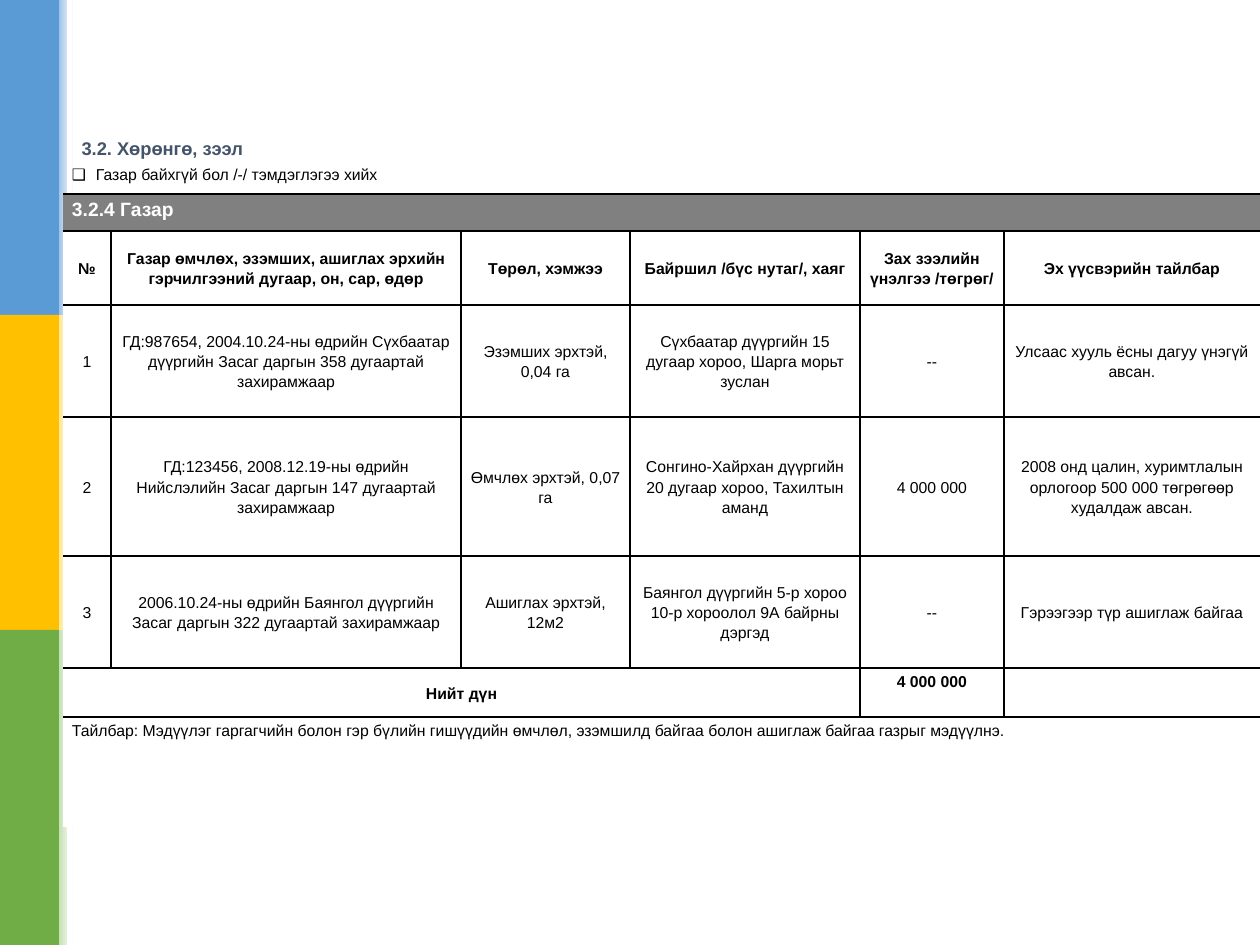
from lxml.etree import SubElement
from pptx import Presentation
from pptx.dml.color import RGBColor
from pptx.enum.shapes import MSO_SHAPE as Shape
from pptx.enum.text import MSO_ANCHOR as Anchor, PP_ALIGN as Align
from pptx.oxml.ns import qn
from pptx.util import Emu, Pt

FONT = "Arial"
BLACK, WHITE, GREY, SLATE = "000000", "FFFFFF", "808080", "44546A"
STRIPES = [("5B9BD5", "9DC3E6"), ("FFC000", "FFE699"), ("70AD47", "C5E0B4")]
STRIPE_HEIGHT = 315
COLUMN_WIDTHS = [48, 350, 169, 230, 144, 256]
ROW_HEIGHTS = [33, 37, 74, 112, 139, 112, 49, 110]
NOTE_ROW, BAND_ROW, HEADER_ROW, TOTAL_ROW, REMARK_ROW = 0, 1, 2, 6, 7

NOTE = "Газар байхгүй бол /-/ тэмдэглэгээ хийх"
REMARK = ("Тайлбар: Мэдүүлэг гаргагчийн болон гэр бүлийн гишүүдийн өмчлөл, "
          "эзэмшилд байгаа болон ашиглаж байгаа газрыг мэдүүлнэ.")
LAND_ROWS = [
    ["№", "Газар өмчлөх, эзэмших, ашиглах эрхийн гэрчилгээний дугаар, он, сар, өдөр",
     "Төрөл, хэмжээ", "Байршил /бүс нутаг/, хаяг",
     "Зах зээлийн үнэлгээ /төгрөг/", "Эх үүсвэрийн тайлбар"],
    ["1", "ГД:987654, 2004.10.24-ны өдрийн Сүхбаатар дүүргийн Засаг даргын "
     "358 дугаартай захирамжаар", "Эзэмших эрхтэй, 0,04 га",
     "Сүхбаатар дүүргийн 15 дугаар хороо, Шарга морьт зуслан", "--",
     "Улсаас хууль ёсны дагуу үнэгүй авсан."],
    ["2", "ГД:123456, 2008.12.19-ны өдрийн Нийслэлийн Засаг даргын "
     "147 дугаартай захирамжаар", "Өмчлөх эрхтэй, 0,07 га",
     "Сонгино-Хайрхан дүүргийн 20 дугаар хороо, Тахилтын аманд", "4 000 000",
     "2008 онд цалин, хуримтлалын орлогоор 500 000 төгрөгөөр худалдаж авсан."],
    ["3", "2006.10.24-ны өдрийн Баянгол дүүргийн Засаг даргын "
     "322 дугаартай захирамжаар", "Ашиглах эрхтэй, 12м2",
     "Баянгол дүүргийн 5-р хороо 10-р хороолол 9А байрны дэргэд", "--",
     "Гэрээгээр түр ашиглаж байгаа"],
]


def px(length):
    return Emu(round(length * 914400 / 126))


def rgb(hex_color):
    return RGBColor.from_string(hex_color)


def add_run(paragraph, text, size=9, color=BLACK, bold=False):
    run = paragraph.add_run()
    run.text = text
    run.font.name, run.font.size, run.font.bold = FONT, Pt(size), bold
    run.font.color.rgb = rgb(color)


def add_bar(slide, left, top, width, height, color, fade=False):
    bar = slide.shapes.add_shape(Shape.RECTANGLE, px(left), px(top), px(width), px(height))
    bar.shadow.inherit = False
    bar.line.fill.background()
    if fade:
        bar.fill.gradient()
        bar.fill.gradient_angle = 0
        for stop, stop_color in zip(bar.fill.gradient_stops, (color, WHITE)):
            stop.color.rgb = rgb(stop_color)
            stop.position = 0 if stop_color == color else 1
    else:
        bar.fill.solid()
        bar.fill.fore_color.rgb = rgb(color)


def add_side_stripes(slide):
    for index, (color, tint) in enumerate(STRIPES):
        top = index * STRIPE_HEIGHT
        add_bar(slide, 0, top, 59, STRIPE_HEIGHT, color)
        add_bar(slide, 59, top, 15, STRIPE_HEIGHT, tint, fade=True)
    add_bar(slide, 67, 0, 5, 945, WHITE)


def set_title(slide, text):
    title = slide.shapes.title
    title.left, title.top, title.width, title.height = px(69), px(137), px(876), px(39)
    frame = title.text_frame
    frame.vertical_anchor = Anchor.TOP
    frame.margin_top = frame.margin_bottom = 0
    frame.paragraphs[0].alignment = Align.LEFT
    add_run(frame.paragraphs[0], text, 10.5, SLATE, True)


def set_borders(cell, edges):
    """Draw the given edges (letters of LRTB) in black and clear the others."""
    properties = cell._tc.get_or_add_tcPr()
    for position, edge in enumerate("LRTB"):
        line = properties.makeelement(qn(f"a:ln{edge}"), {"w": str(Pt(1))})
        properties.insert(position, line)
        if edge in edges:
            fill = SubElement(line, qn("a:solidFill"))
            SubElement(fill, qn("a:srgbClr"), val=BLACK)
        else:
            SubElement(line, qn("a:noFill"))


def edges_of(row, column):
    if row == NOTE_ROW:
        return "B"
    if row == REMARK_ROW:
        return "T"
    edges = "TB"
    if row > BAND_ROW:
        edges += "L" if column > 0 else ""
        edges += "R" if column < len(COLUMN_WIDTHS) - 1 else ""
    return edges


def set_margins(cell, side, end):
    cell.margin_left = cell.margin_right = px(side)
    cell.margin_top = cell.margin_bottom = px(end)


def fill_body_cell(cell, text, bold=False):
    cell.vertical_anchor = Anchor.MIDDLE
    paragraph = cell.text_frame.paragraphs[0]
    paragraph.alignment, paragraph.line_spacing = Align.CENTER, 1.15
    add_run(paragraph, text, bold=bold)


def fill_edge_cell(cell, text, align=Align.LEFT, **style):
    """Write top-anchored text, as in the rows around the body."""
    set_margins(cell, 9, 5)
    paragraph = cell.text_frame.paragraphs[0]
    paragraph.alignment = align
    add_run(paragraph, text, **style)


def add_bullet(paragraph, symbol):
    properties = paragraph._p.get_or_add_pPr()
    properties.set("marL", str(px(24)))
    properties.set("indent", str(-px(24)))
    SubElement(properties, qn("a:buFont"), typeface=FONT)
    SubElement(properties, qn("a:buChar"), char=symbol)


def add_land_table(slide):
    table = slide.shapes.add_table(
        len(ROW_HEIGHTS), len(COLUMN_WIDTHS), px(63), px(161),
        px(sum(COLUMN_WIDTHS)), px(sum(ROW_HEIGHTS))).table
    table.first_row = table.horz_banding = False
    for column, width in zip(table.columns, COLUMN_WIDTHS):
        column.width = px(width)
    for row_index, (row, height) in enumerate(zip(table.rows, ROW_HEIGHTS)):
        row.height = px(height)
        for column_index, cell in enumerate(row.cells):
            set_margins(cell, 8, 0)
            if row_index == NOTE_ROW:
                cell.fill.background()
            else:
                cell.fill.solid()
                cell.fill.fore_color.rgb = rgb(GREY if row_index == BAND_ROW else WHITE)
            set_borders(cell, edges_of(row_index, column_index))

    for row in (NOTE_ROW, BAND_ROW, REMARK_ROW):
        table.cell(row, 0).merge(table.cell(row, len(COLUMN_WIDTHS) - 1))
    table.cell(TOTAL_ROW, 0).merge(table.cell(TOTAL_ROW, 3))

    note = table.cell(NOTE_ROW, 0)
    add_bullet(note.text_frame.paragraphs[0], "❑")
    fill_edge_cell(note, NOTE)
    fill_edge_cell(table.cell(BAND_ROW, 0), "3.2.4 Газар", size=11, color=WHITE, bold=True)
    for row_index, texts in enumerate(LAND_ROWS, HEADER_ROW):
        for column_index, text in enumerate(texts):
            fill_body_cell(table.cell(row_index, column_index), text, row_index == HEADER_ROW)
    fill_body_cell(table.cell(TOTAL_ROW, 0), "Нийт дүн", bold=True)
    fill_edge_cell(table.cell(TOTAL_ROW, 4), "4 000 000", Align.CENTER, bold=True)
    fill_edge_cell(table.cell(REMARK_ROW, 0), REMARK)


def main():
    deck = Presentation()
    deck.slide_width, deck.slide_height = px(1260), px(945)
    slide = deck.slides.add_slide(deck.slide_layouts[5])
    add_side_stripes(slide)
    set_title(slide, "3.2. Хөрөнгө, зээл")
    add_land_table(slide)
    deck.save("out.pptx")


if __name__ == "__main__":
    main()
